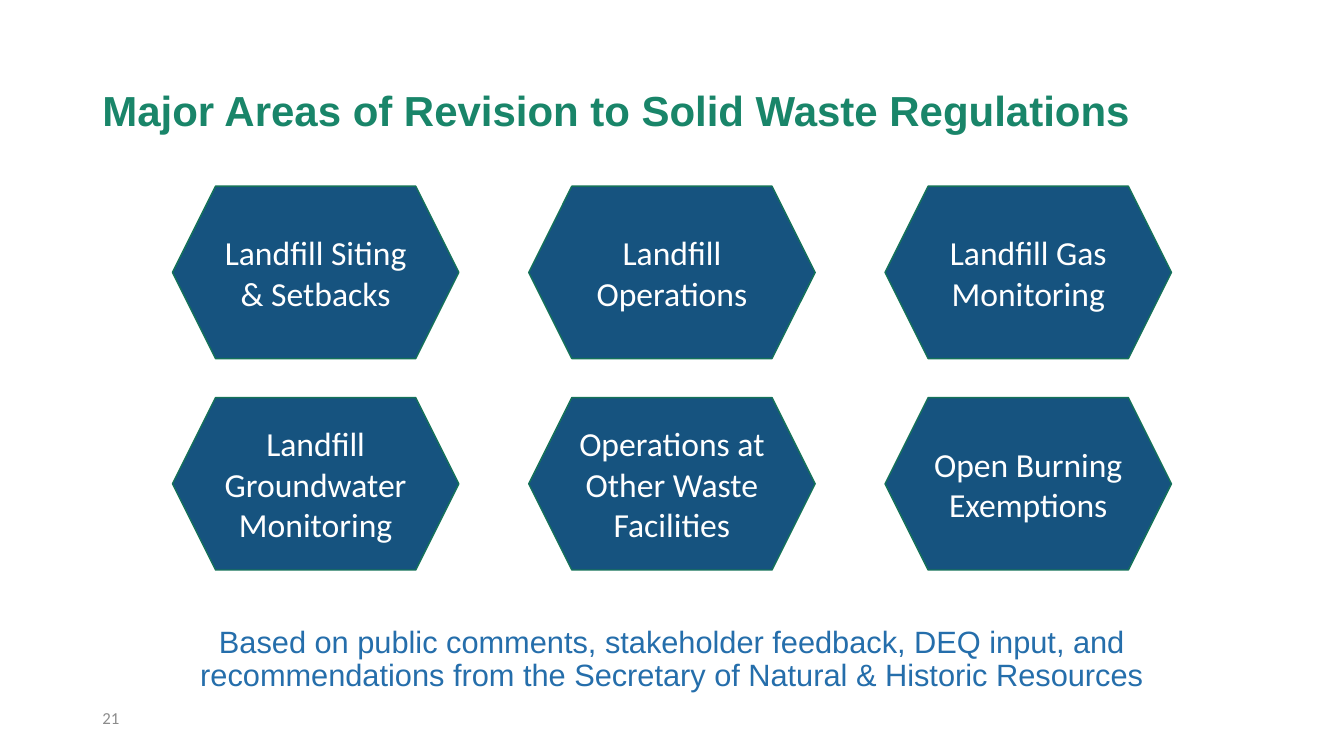
from pptx import Presentation
from pptx.dml.color import RGBColor
from pptx.enum.shapes import MSO_SHAPE
from pptx.enum.text import MSO_ANCHOR, MSO_AUTO_SIZE, PP_ALIGN
from pptx.util import Pt

AREAS = [
    "Landfill Siting & Setbacks",
    "Landfill Operations",
    "Landfill Gas Monitoring",
    "Landfill Groundwater Monitoring",
    "Operations at Other Waste Facilities",
    "Open Burning Exemptions",
]


def tint(code):
    return RGBColor.from_string(code)


def write(shape, text, font, size, color, align=PP_ALIGN.LEFT,
          anchor=MSO_ANCHOR.MIDDLE, bold=False, lines=1.0):
    frame = shape.text_frame
    frame.text = text
    frame.word_wrap = True
    frame.auto_size = MSO_AUTO_SIZE.NONE
    frame.vertical_anchor = anchor
    para = frame.paragraphs[0]
    para.alignment = align
    para.line_spacing = lines
    face = para.runs[0].font
    face.name, face.size, face.bold = font, Pt(size), bold
    face.color.rgb = tint(color)


def add_title(slide, text):
    title = slide.shapes.title
    title.left, title.top = Pt(66), Pt(28.8)
    title.width, title.height = Pt(828), Pt(104.4)
    write(title, text, "Arial", 30, "198569", bold=True, lines=0.9)


def add_text(slide, box, text, *style, **more):
    label = slide.shapes.add_textbox(*map(Pt, box))
    write(label, text, *style, **more)


def add_hex(slide, left, top, text):
    tile = slide.shapes.add_shape(
        MSO_SHAPE.HEXAGON, Pt(left), Pt(top), Pt(204.6), Pt(123.2))
    tile.shadow.inherit = False
    tile.fill.solid()
    tile.fill.fore_color.rgb = tint("16537F")
    tile.line.color.rgb = tint("157259")
    tile.line.width = Pt(1)
    frame = tile.text_frame
    frame.margin_left = frame.margin_right = Pt(4)
    frame.margin_top = frame.margin_bottom = Pt(0)
    write(tile, text, "Calibri", 24, "FFFFFF", PP_ALIGN.CENTER)


def main():
    deck = Presentation()
    deck.slide_width, deck.slide_height = Pt(960), Pt(540)
    slide = deck.slides.add_slide(deck.slide_layouts[5])

    # Heading
    add_title(slide, "Major Areas of Revision to Solid Waste Regulations")

    # Grid of revision areas, three to a row
    for i, area in enumerate(AREAS):
        row, col = divmod(i, 3)
        add_hex(slide, 123.2 + 254.5 * col, 133 + 151 * row, area)

    # Closing statement
    add_text(slide, (99.4, 444.2, 761, 64),
             "Based on public comments, stakeholder feedback, DEQ input, and "
             "recommendations from the Secretary of Natural & Historic Resources",
             "Arial", 22, "256EAB", PP_ALIGN.CENTER, MSO_ANCHOR.TOP, lines=0.9)

    # Page number
    add_text(slide, (66, 496.8, 828, 32.4), "21", "Calibri", 12, "8C8C8C")

    deck.save("out.pptx")


if __name__ == "__main__":
    main()
